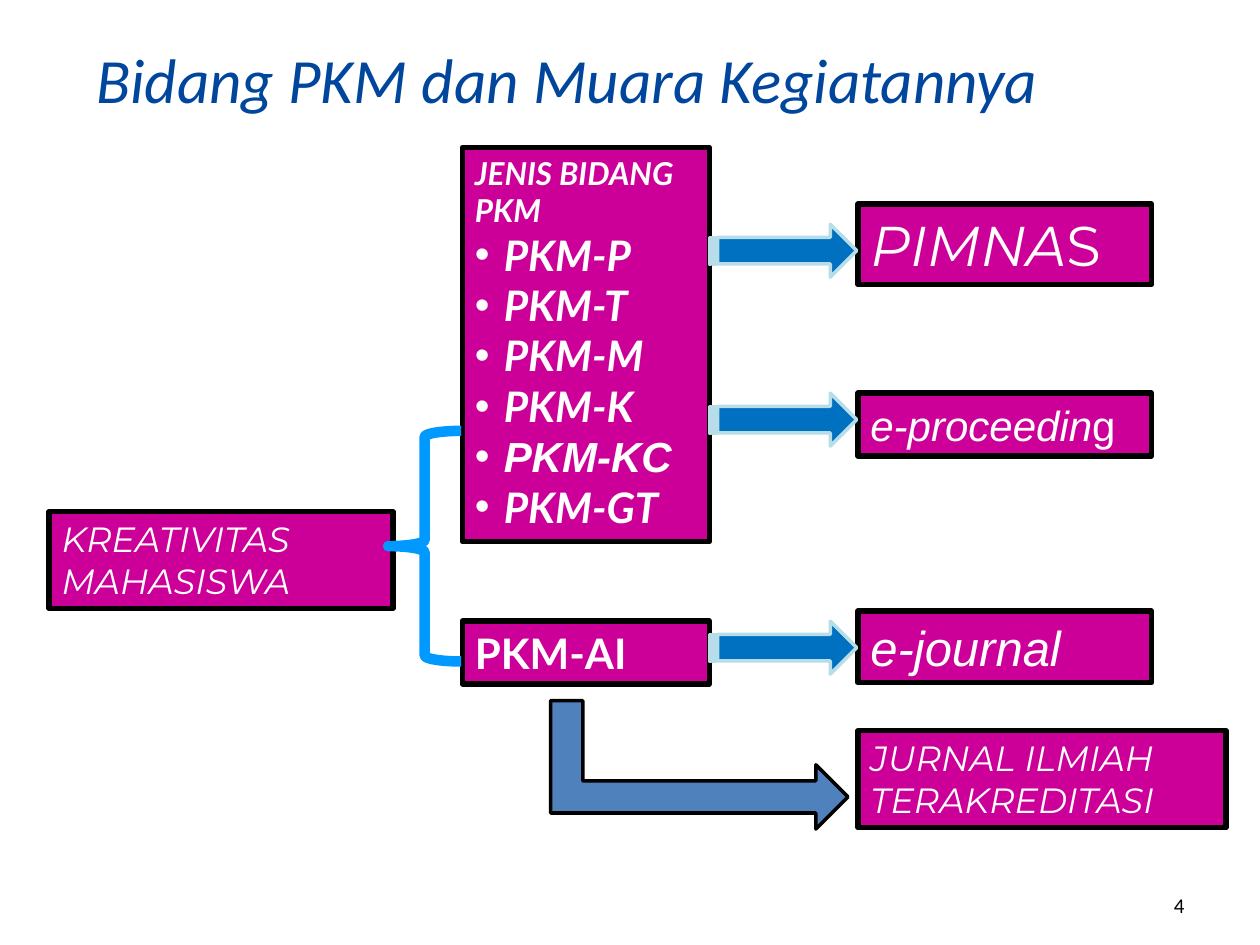
from dataclasses import dataclass

from lxml.etree import SubElement
from pptx import Presentation
from pptx.dml.color import RGBColor
from pptx.enum.shapes import MSO_SHAPE
from pptx.enum.text import MSO_ANCHOR, MSO_AUTO_SIZE, PP_ALIGN
from pptx.oxml.ns import qn
from pptx.util import Pt

EMU_PER_PX = 9144


@dataclass(frozen=True)
class Theme:
    title: str = "00469C"
    box: str = "CC0099"
    ink: str = "000000"
    light: str = "FFFFFF"
    arrow: str = "0070C0"
    arrow_edge: str = "B7DEE8"
    brace: str = "0099FF"
    bent_arrow: str = "4F81BD"
    title_size: int = 36
    number_size: int = 12
    display_size: int = 32
    journal_size: int = 28
    item_size: int = 24
    label_size: int = 20
    heading_size: int = 18


THEME = Theme()
TITLE = "Bidang PKM dan Muara Kegiatannya"
PAGE_NUMBER = "4"
HEADING = "JENIS BIDANG PKM"
FIELDS = ["PKM-P", "PKM-T", "PKM-M", "PKM-K", "PKM-KC", "PKM-GT"]
ARIAL_FIELD = "PKM-KC"

FIELD_X, FIELD_WIDTH = 367, 196
OUTCOME_X, OUTCOME_WIDTH = 681, 233
ARROW_X = FIELD_X + FIELD_WIDTH
ARROW_WIDTH, ARROW_HEIGHT = 117, 42
ARROW_TOPS = [178, 312, 493]
BULLET_INDENT = 23

LABELS = [
    ((39, 406, 273, 77), ["KREATIVITAS", "MAHASISWA"], "", "Montserrat", THEME.label_size, False, True),
    ((FIELD_X, 493, FIELD_WIDTH, 50), ["PKM-AI"], "", "Lato", THEME.item_size, True, False),
    ((OUTCOME_X, 162, OUTCOME_WIDTH, 64), ["PIMNA"], "S", "Montserrat", THEME.display_size, False, True),
    ((OUTCOME_X, 312, OUTCOME_WIDTH, 50), ["e-proceedin"], "g", "Arial", THEME.item_size, False, True),
    ((OUTCOME_X, 485, OUTCOME_WIDTH, 57), ["e-journal"], "", "Arial", THEME.journal_size, False, True),
    ((OUTCOME_X, 580, 292, 77), ["JURNAL ILMIAH TERAKREDITASI"], "", "Montserrat", THEME.label_size, False, True),
]


def px(*lengths):
    return [length * EMU_PER_PX for length in lengths]


def style(run, font, size, color, bold=False, italic=False):
    run.font.name = font
    run.font.size = Pt(size)
    run.font.color.rgb = RGBColor.from_string(color)
    run.font.bold = bold
    run.font.italic = italic


def add_figure(slide, preset, bounds, fill, edge, weight):
    figure = slide.shapes.add_shape(preset, *px(*bounds))
    figure.shadow.inherit = False
    if fill:
        figure.fill.solid()
        figure.fill.fore_color.rgb = RGBColor.from_string(fill)
    else:
        figure.fill.background()
    figure.line.color.rgb = RGBColor.from_string(edge)
    figure.line.width = Pt(weight)
    return figure


def add_box(slide, bounds, lines):
    frame = add_figure(slide, MSO_SHAPE.RECTANGLE, bounds, THEME.box, THEME.ink, 3).text_frame
    frame.text = "\n".join(lines)
    frame.word_wrap = True
    frame.vertical_anchor = MSO_ANCHOR.TOP
    frame.auto_size = MSO_AUTO_SIZE.SHAPE_TO_FIT_TEXT
    for paragraph in frame.paragraphs:
        paragraph.alignment = PP_ALIGN.LEFT
    return frame.paragraphs


def add_label(slide, bounds, lines, upright_end, font, size, bold, italic):
    paragraphs = add_box(slide, bounds, lines)
    for paragraph in paragraphs:
        style(paragraph.runs[0], font, size, THEME.light, bold, italic)
    if upright_end:
        ending = paragraphs[-1].add_run()
        ending.text = upright_end
        style(ending, font, size, THEME.light, bold)


def add_field_list(slide):
    heading, *fields = add_box(slide, (FIELD_X, 117, FIELD_WIDTH, 313), [HEADING, *FIELDS])
    style(heading.runs[0], "Lato", THEME.heading_size, THEME.light, True, True)
    indent = BULLET_INDENT * EMU_PER_PX
    for field in fields:
        font = "Arial" if field.text == ARIAL_FIELD else "Lato"
        style(field.runs[0], font, THEME.item_size, THEME.light, True, True)
        properties = field._p.get_or_add_pPr()
        properties.set("marL", str(indent))
        properties.set("indent", str(-indent))
        SubElement(properties, qn("a:buFont"), typeface="Arial")
        SubElement(properties, qn("a:buChar"), char="•")


def add_title(slide):
    title = slide.shapes.title
    title.left, title.top, title.width, title.height = px(0, 25, 900, 75)
    title.text_frame.text = TITLE
    title.text_frame.vertical_anchor = MSO_ANCHOR.MIDDLE
    heading = title.text_frame.paragraphs[0]
    heading.alignment = PP_ALIGN.CENTER
    style(heading.runs[0], "Calibri", THEME.title_size, THEME.title, italic=True)


def add_page_number(slide):
    frame = slide.shapes.add_textbox(*px(717, 683, 233, 50)).text_frame
    frame.text = PAGE_NUMBER
    frame.word_wrap = True
    frame.vertical_anchor = MSO_ANCHOR.BOTTOM
    number = frame.paragraphs[0]
    number.alignment = PP_ALIGN.RIGHT
    style(number.runs[0], "Calibri", THEME.number_size, THEME.ink)


def main():
    deck = Presentation()
    deck.slide_width, deck.slide_height = px(1000, 750)
    slide = deck.slides.add_slide(deck.slide_layouts[5])
    add_title(slide)
    add_page_number(slide)
    add_field_list(slide)
    for label in LABELS:
        add_label(slide, *label)
    for top in ARROW_TOPS:
        bounds = (ARROW_X, top, ARROW_WIDTH, ARROW_HEIGHT)
        add_figure(slide, MSO_SHAPE.STRIPED_RIGHT_ARROW, bounds, THEME.arrow, THEME.arrow_edge, 2)
    add_figure(slide, MSO_SHAPE.LEFT_BRACE, (308, 342, 58, 183), None, THEME.brace, 6)
    bent_arrow = add_figure(
        slide, MSO_SHAPE.BENT_UP_ARROW, (504, 489, 102, 236), THEME.bent_arrow, THEME.ink, 2
    )
    bent_arrow.rotation = 90
    deck.save("out.pptx")


if __name__ == "__main__":
    main()
